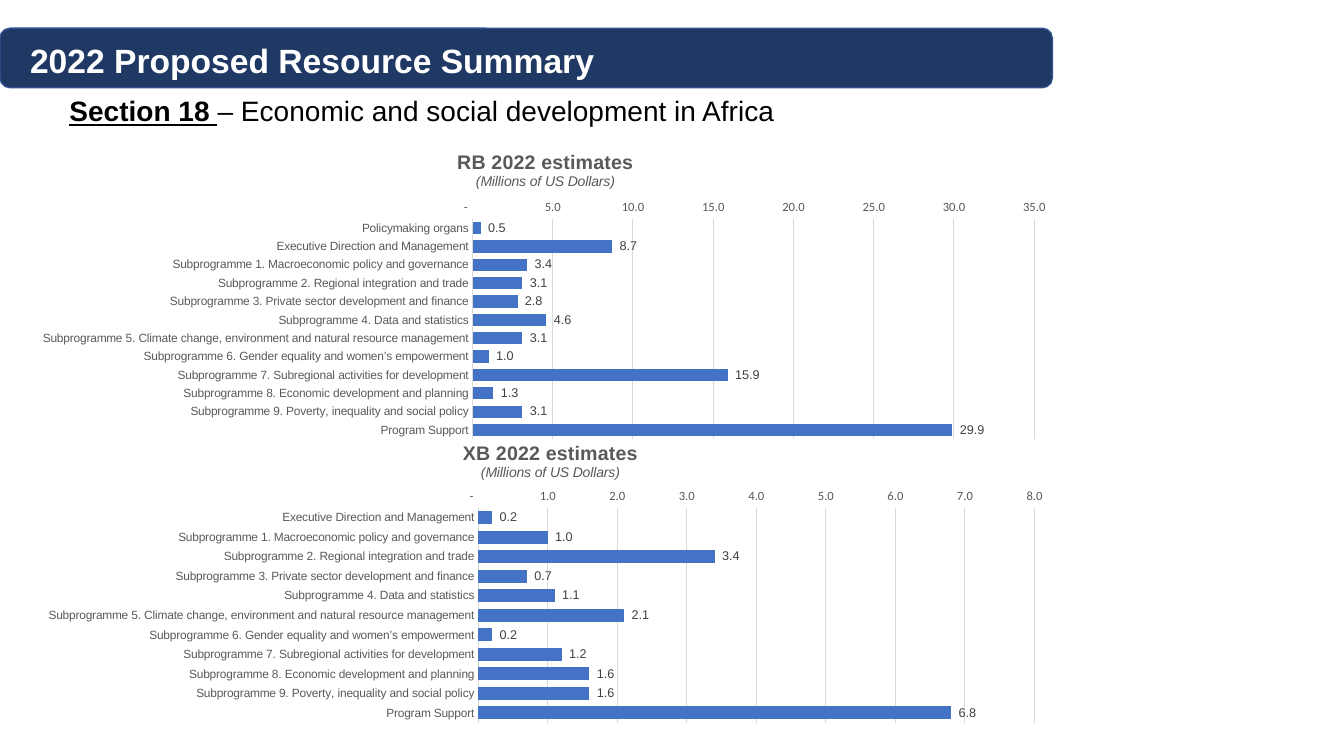
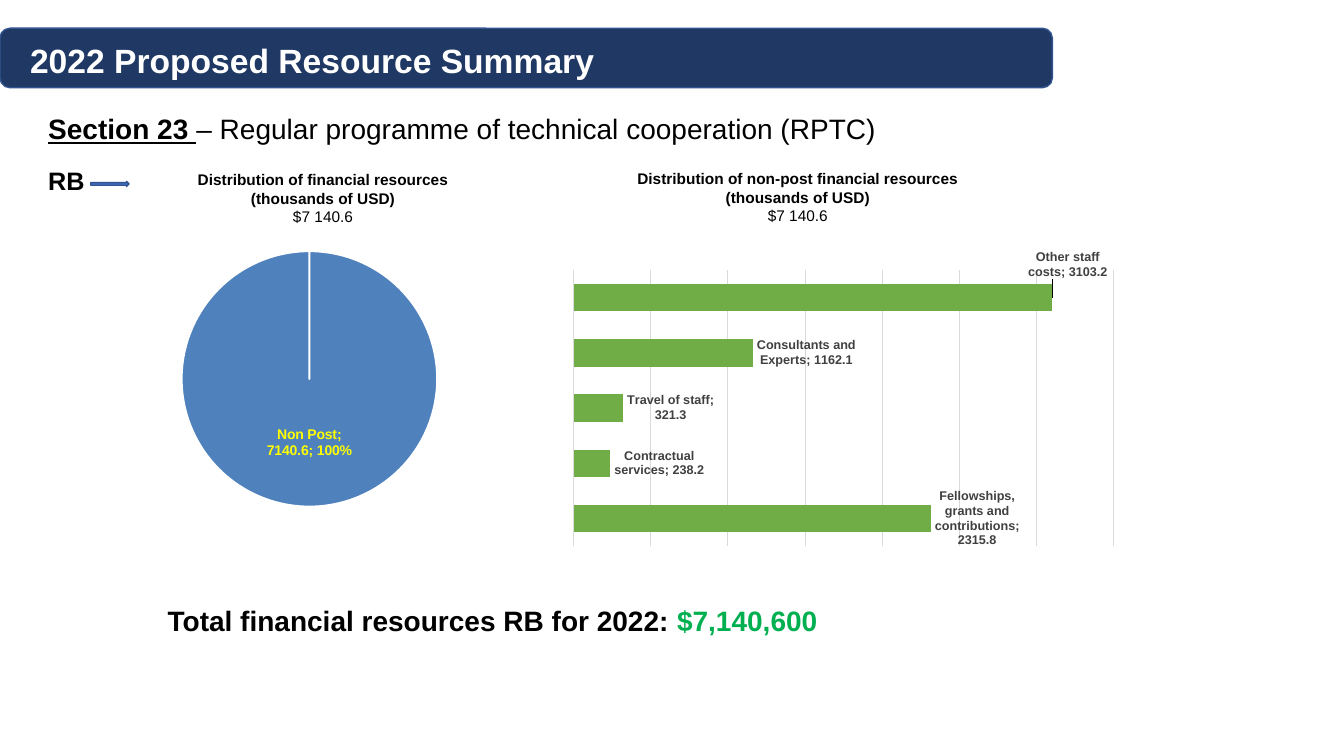
from dataclasses import dataclass

from lxml.etree import SubElement
from pptx import Presentation
from pptx.chart.data import CategoryChartData
from pptx.dml.color import RGBColor
from pptx.enum.chart import XL_CHART_TYPE as ChartType
from pptx.enum.chart import XL_LABEL_POSITION as LabelPosition
from pptx.enum.chart import XL_TICK_MARK as TickMark
from pptx.enum.shapes import MSO_SHAPE as Shape
from pptx.enum.text import MSO_ANCHOR as Anchor
from pptx.enum.text import PP_ALIGN as Align
from pptx.oxml import parse_xml
from pptx.oxml.ns import nsdecls, qn
from pptx.util import Inches, Pt

NAVY, BLUE, OUTLINE, GREEN = "203864", "4472C4", "325491", "70AD47"
BLACK, WHITE, YELLOW, TOTAL_GREEN = "000000", "FFFFFF", "FFFF00", "00B050"
GREY, DARK_GREY, PALE_GREY = "595959", "404040", "D9D9D9"
FONT = "Arial"
MILLIONS = '_(* #,##0.0_);_(* \\(#,##0.0\\);_(* "-"??_);_(@_)'

PROGRAMMES = [
    "Executive Direction and Management",
    "Subprogramme 1. Macroeconomic policy and governance",
    "Subprogramme 2. Regional integration and trade",
    "Subprogramme 3. Private sector development and finance",
    "Subprogramme 4. Data and statistics",
    "Subprogramme 5. Climate change, environment and natural resource management",
    "Subprogramme 6. Gender equality and women’s empowerment",
    "Subprogramme 7. Subregional activities for development",
    "Subprogramme 8. Economic development and planning",
    "Subprogramme 9. Poverty, inequality and social policy",
    "Program Support",
]
RB_VALUES = [0.5, 8.7, 3.4, 3.1, 2.8, 4.6, 3.1, 1, 15.9, 1.3, 3.1, 29.9]
XB_VALUES = [0.2, 1, 3.4, 0.7, 1.1, 2.1, 0.2, 1.2, 1.6, 1.6, 6.8]
NON_POST_COSTS = {
    "Other staff costs": 3103.2,
    "Consultants and Experts": 1162.1,
    "Travel of staff": 321.3,
    "Contractual services": 238.2,
    "Fellowships, grants and contributions": 2315.8,
}


@dataclass
class Box:
    """A rectangle whose portions are given in percent of its size."""

    left: int
    top: int
    width: int
    height: int

    def portion(self, left, top, width, height):
        """Return the box covering the given percentages of this one."""
        return Box(
            int(self.left + self.width * left / 100),
            int(self.top + self.height * top / 100),
            int(self.width * width / 100),
            int(self.height * height / 100),
        )

    def frame(self):
        """Return left, top, width and height."""
        return self.left, self.top, self.width, self.height


def color(hex_text):
    """Turn a hex string into a colour."""
    return RGBColor.from_string(hex_text)


def style_font(font, size, tint=BLACK, bold=False, italic=False, name=FONT):
    """Set the look of a font."""
    font.name, font.size = name, Pt(size)
    font.bold, font.italic = bold, italic
    font.color.rgb = color(tint)


def add_preset(page, kind, box, fill, outline=None):
    """Add a flat preset shape."""
    shape = page.shapes.add_shape(kind, *box.frame())
    shape.shadow.inherit = False
    shape.fill.solid()
    shape.fill.fore_color.rgb = color(fill)
    if outline:
        shape.line.color.rgb = color(outline)
        shape.line.width = Pt(1)
    else:
        shape.line.fill.background()
    return shape


def add_line(page, box, texts, size, tint=BLACK, bold=True, align=Align.LEFT):
    """Add a one-paragraph text box and return its runs."""
    frame = page.shapes.add_textbox(*box.frame()).text_frame
    frame.word_wrap = True
    para = frame.paragraphs[0]
    para.alignment = align
    style_font(para.font, size, tint, bold)
    spans = []
    for text in texts:
        span = para.add_run()
        span.text = text
        spans.append(span)
    return spans


def add_banner(page, box):
    """Add the title band shared by the slides."""
    add_preset(page, Shape.ROUNDED_RECTANGLE, box, NAVY, OUTLINE)
    title = box.portion(1.92, 11.9, 86.9, 84.7)
    add_line(page, title, ["2022 Proposed Resource Summary"], 24, WHITE)


def add_section(page, box, number, name):
    """Add the section heading."""
    label, rest = add_line(page, box, [f"Section {number} ", f"– {name}"], 20)
    label.font.underline = True
    rest.font.bold = False


def start_page(deck):
    """Add a blank slide with its banner; return it with its full box."""
    page = deck.slides.add_slide(deck.slide_layouts[6])
    whole = Box(0, 0, deck.slide_width, deck.slide_height)
    add_banner(page, whole.portion(0, 3.73, 78.3, 7.87))
    return page, whole


def manual_layout(targets, *numbers):
    """Build a chart layout element from fractions of the chart."""
    layout = parse_xml(f"<c:layout {nsdecls('c')}><c:manualLayout/></c:layout>")
    for tag, value in zip(targets, numbers):
        SubElement(layout[0], qn(f"c:{tag}")).set("val", str(value))
    return layout


def add_plot(page, kind, box, names, values, fill, area):
    """Add a one-series chart whose plot fills the given area."""
    data = CategoryChartData()
    data.categories = names
    data.add_series("Series 1", values)
    chart = page.shapes.add_chart(kind, *box.frame(), data).chart
    chart.has_legend = chart.has_title = False
    style_font(chart.font, 10, name="Calibri")
    plot_area = chart._chartSpace.chart.plotArea
    for old in plot_area.findall(qn("c:layout")):
        plot_area.remove(old)
    tags = ("layoutTarget", "xMode", "yMode", "x", "y", "w", "h")
    plot_area.insert(0, manual_layout(tags, "inner", "edge", "edge", *area))
    plot = chart.plots[0]
    plot.vary_by_categories = False
    series = plot.series[0]
    series.format.fill.solid()
    series.format.fill.fore_color.rgb = color(fill)
    return chart, series


def name_in_labels(labels_xml):
    """Show category names before the values, split by a semicolon."""
    labels_xml.find(qn("c:showCatName")).set("val", "1")
    separator = parse_xml(f"<c:separator {nsdecls('c')}>; </c:separator>")
    labels_xml.find(qn("c:showBubbleSize")).addnext(separator)


def add_bars(page, box, names, values, fill, area, gap, top_value, step):
    """Add a bar chart read from the top down."""
    chart, series = add_plot(
        page, ChartType.BAR_CLUSTERED, box, names, values, fill, area)
    chart.plots[0].gap_width = gap
    series.invert_if_negative = False
    chart.category_axis.reverse_order = True
    axis = chart.value_axis
    axis.minimum_scale, axis.maximum_scale, axis.major_unit = 0, top_value, step
    axis.has_major_gridlines = True
    axis.major_gridlines.format.line.color.rgb = color(PALE_GREY)
    axis.major_gridlines.format.line.width = Pt(0.75)
    labels = series.data_labels
    labels.show_value = True
    labels.position = LabelPosition.OUTSIDE_END
    return chart, series


def add_estimates(page, box, fund, names, values, top_value, step):
    """Add a titled bar chart of programme estimates."""
    chart, series = add_bars(page, box, names, values, BLUE,
                             (0.43, 0.27, 0.54, 0.71), 50, top_value, step)
    frame = chart.chart_title.text_frame
    frame.text = f"{fund} 2022 estimates\n(Millions of US Dollars)"
    heading, unit = frame.paragraphs
    style_font(heading.font, 14, GREY, bold=True)
    style_font(unit.font, 10, GREY, italic=True)
    names_axis, values_axis = chart.category_axis, chart.value_axis
    names_axis.major_tick_mark = values_axis.major_tick_mark = TickMark.NONE
    style_font(names_axis.tick_labels.font, 8.5, GREY)
    names_axis.format.line.color.rgb = color(PALE_GREY)
    names_axis.format.line.width = Pt(0.75)
    style_font(values_axis.tick_labels.font, 9, GREY, name="Calibri")
    values_axis.format.line.fill.background()
    for labels in (values_axis.tick_labels, series.data_labels):
        labels.number_format = MILLIONS
        labels.number_format_is_linked = False
    style_font(series.data_labels.font, 9, DARK_GREY)


def add_caption(page, box, headings, amount):
    """Add the centred caption of a chart."""
    frame = add_preset(page, Shape.RECTANGLE, box, WHITE).text_frame
    frame.word_wrap = True
    frame.vertical_anchor = Anchor.TOP
    frame.text = "\n".join([*headings, amount])
    for para in frame.paragraphs:
        para.alignment = Align.CENTER
        style_font(para.font, 11, bold=para.text != amount)


def add_resources_pie(page, box):
    """Add the captioned pie of all financial resources."""
    add_caption(page, box.portion(8.45, 0, 89.27, 18.13),
                ["Distribution of financial resources", "(thousands of USD)"],
                "$7 140.6")
    chart, series = add_plot(
        page, ChartType.PIE, box.portion(0, 19.47, 100, 80.53),
        ["Non Post"], [7140.6], GREEN, (0.18, 0.04, 0.64, 0.84))
    series.format.line.color.rgb = color(WHITE)
    series.format.line.width = Pt(1.5)
    labels = series.data_labels
    labels.show_value = labels.show_percentage = True
    labels.position = LabelPosition.CENTER
    style_font(labels.font, 10, YELLOW, bold=True)
    name_in_labels(labels._element)


def add_costs_bars(page, box):
    """Add the captioned bars of non-post resources."""
    add_caption(page, box.portion(5.02, 0, 73.66, 18.44),
                ["Distribution of non-post financial resources (thousands of USD)"],
                "$7 140.6")
    chart, series = add_bars(
        page, box.portion(0, 22.08, 100, 77.92), list(NON_POST_COSTS),
        list(NON_POST_COSTS.values()), GREEN, (0.02, 0.06, 0.96, 0.92),
        100, 3500, 500)
    chart.category_axis.visible = chart.value_axis.visible = False
    style_font(series.data_labels.font, 9, DARK_GREY, bold=True)
    name_in_labels(series.data_labels._element)
    longest = series.points[0].data_label
    style_font(longest.font, 9, DARK_GREY, bold=True)
    longest.position = LabelPosition.OUTSIDE_END
    label_xml = series.data_labels._element.find(qn("c:dLbl"))
    name_in_labels(label_xml)
    label_xml.find(qn("c:idx")).addnext(manual_layout("xy", -0.05, -0.11))


def add_fund_marker(page, box):
    """Add the fund name with its arrow."""
    add_line(page, box.portion(0, 0, 64.44, 100), ["RB"], 18)
    arrow = box.portion(57.78, 52.5, 42.22, 12.5)
    add_preset(page, Shape.RIGHT_ARROW, arrow, BLUE, OUTLINE)


def build_africa(deck):
    """Build the slide on development in Africa."""
    page, whole = start_page(deck)
    add_section(page, whole.portion(4.43, 11.73, 68.85, 5.87), 18,
                "Economic and social development in Africa")
    add_estimates(page, whole.portion(2.63, 56.4, 76.65, 40), "XB",
                  PROGRAMMES, XB_VALUES, 8, 1)
    add_estimates(page, whole.portion(1.88, 17.87, 77.4, 41.07), "RB",
                  ["Policymaking organs", *PROGRAMMES], RB_VALUES, 35, 5)


def build_cooperation(deck):
    """Build the slide on technical cooperation."""
    page, whole = start_page(deck)
    add_section(page, whole.portion(2.85, 14.13, 77.4, 5.87), 23,
                "Regular programme of technical cooperation (RPTC)")
    add_resources_pie(page, whole.portion(6.6, 21.87, 32.85, 50))
    add_costs_bars(page, whole.portion(41.85, 21.73, 41.85, 51.33))
    add_fund_marker(page, whole.portion(2.85, 21.2, 6.75, 5.33))
    total = add_line(page, whole.portion(9.38, 79.2, 54.53, 5.87),
                     ["Total financial resources RB for 2022: ", "$7,140,600"],
                     20, align=Align.CENTER)
    total[1].font.color.rgb = color(TOTAL_GREEN)


def main():
    """Build and save the deck."""
    deck = Presentation()
    deck.slide_width, deck.slide_height = Inches(13.33), Inches(7.5)
    build_africa(deck)
    build_cooperation(deck)
    deck.save("out.pptx")


if __name__ == "__main__":
    main()
